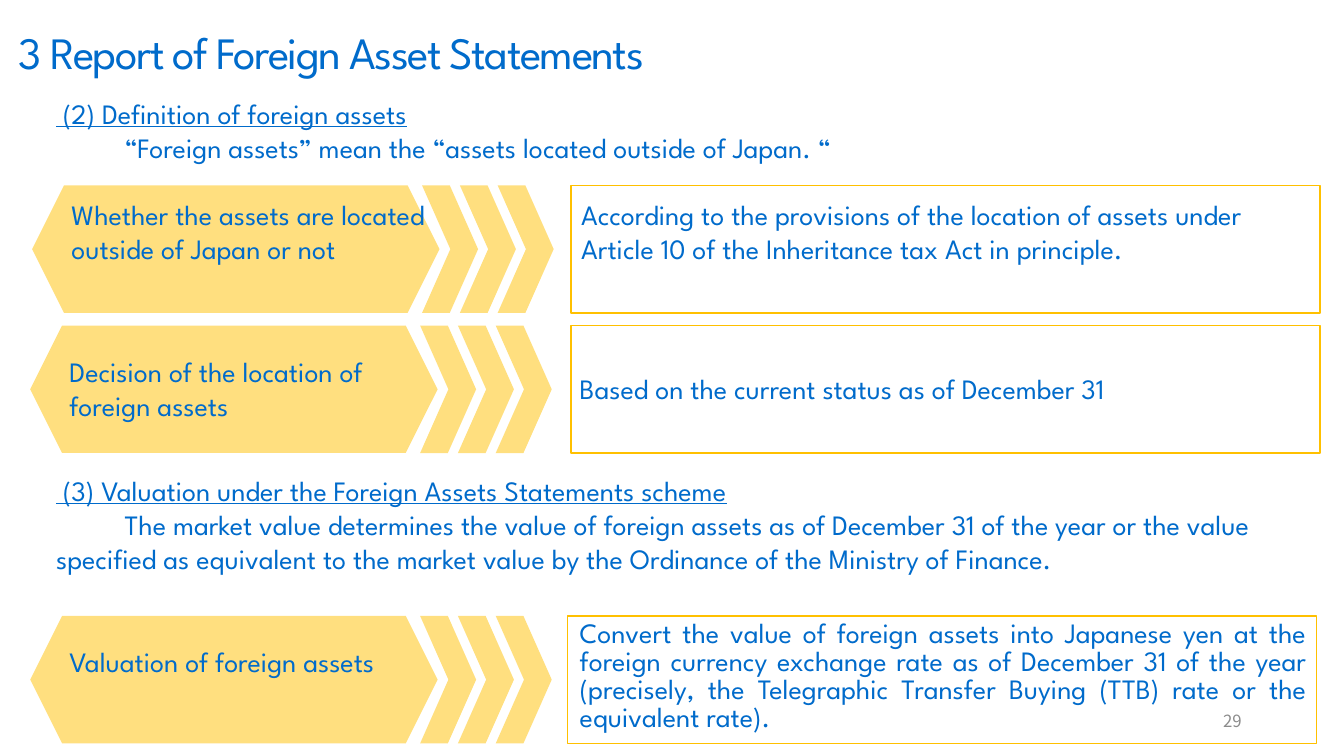
from lxml.etree import SubElement
from pptx import Presentation
from pptx.dml.color import RGBColor
from pptx.enum.shapes import MSO_SHAPE as Preset
from pptx.enum.text import MSO_ANCHOR as Anchor, PP_ALIGN as Align
from pptx.oxml.ns import qn
from pptx.util import Pt

BLUE, GOLD, GREY = "006BCB", "FFC000", "8C8C8C"


def color(value):
    return RGBColor.from_string(value)


class SlideBuilder:
    font = "League Spartan"
    size = 20

    def __init__(self, page):
        self.page = page

    def shape(self, preset, left, top, width, height):
        shape = self.page.shapes.add_shape(
            preset, Pt(left), Pt(top), Pt(width), Pt(height))
        shape.shadow.inherit = False
        return shape

    def tinted(self, preset, left, top, width, height, adjust=None):
        """Add a half-transparent gold shape without an outline."""
        shape = self.shape(preset, left, top, width, height)
        shape.fill.solid()
        shape.fill.fore_color.rgb = color(GOLD)
        tint = shape._element.spPr.find(qn("a:solidFill"))[0]
        SubElement(tint, qn("a:alpha"), val="50000")
        shape.line.fill.background()
        if adjust is not None:
            shape.adjustments[0] = adjust

    def frame(self, left, top, width, height):
        """Add an unfilled box with a gold outline."""
        shape = self.shape(Preset.FLOWCHART_PROCESS, left, top, width, height)
        shape.fill.background()
        shape.line.color.rgb = color(GOLD)
        shape.line.width = Pt(1)

    def text_box(self, left, top, width, height, anchor=Anchor.TOP):
        box = self.page.shapes.add_textbox(
            Pt(left), Pt(top), Pt(width), Pt(height))
        box.text_frame.word_wrap = True
        box.text_frame.vertical_anchor = anchor
        return box.text_frame

    def add_span(self, para, words, size=None, font=None, ink=BLUE,
                 underline=False, tracking=None):
        span = para.add_run()
        span.text = words
        span.font.size = Pt(size or self.size)
        span.font.name = font or self.font
        span.font.color.rgb = color(ink)
        span.font.underline = underline
        if tracking is not None:
            span._r.get_or_add_rPr().set("spc", str(round(tracking * 100)))

    def section(self, top, height, heading, body):
        """Add an underlined heading over a paragraph with a first-line indent."""
        frame = self.text_box(33, top, 917, height)
        self.add_span(frame.paragraphs[0], heading, underline=True)
        para = frame.add_paragraph()
        para._p.get_or_add_pPr().set("indent", str(Pt(49)))
        self.add_span(para, body)

    def row(self, left, top, frame_left, topic, topic_box, answer, answer_box,
            line_spacing=None):
        """Add an arrow band with its topic, and the framed answer beside it."""
        height = 91
        self.tinted(Preset.HEXAGON, left, top, 291, height)
        topic_frame = self.text_box(*topic_box)
        self.add_span(topic_frame.paragraphs[0], topic)
        for step in range(3):
            self.tinted(Preset.CHEVRON, left + 278.5 + 27 * step, top, 40,
                        height, adjust=0.505)
        self.frame(frame_left, top, 535, height)
        para = self.text_box(*answer_box).paragraphs[0]
        if line_spacing:
            para.alignment = Align.JUSTIFY
            para.line_spacing = Pt(line_spacing)
        self.add_span(para, answer)


def main():
    deck = Presentation()
    deck.slide_width, deck.slide_height = Pt(960), Pt(540)
    slide = SlideBuilder(deck.slides.add_slide(deck.slide_layouts[6]))

    title = slide.text_box(6.5, 14.4, 592, 46)
    slide.add_span(title.paragraphs[0], "3 Report of Foreign Asset Statements",
                   size=32, tracking=-1.1)

    slide.section(65.5, 55.5, " (2) Definition of foreign assets",
                  "“Foreign assets” mean the “assets located outside of Japan. “")
    slide.row(23, 132.5, 408,
              "Whether the assets are located outside of Japan or not",
              (44, 137.5, 268.5, 80),
              "According to the provisions of the location of assets under "
              "Article 10 of the Inheritance tax Act in principle.",
              (408, 137.5, 533, 80))
    slide.row(21.6, 232.6, 408,
              "Decision of the location of foreign assets",
              (42.5, 250, 270, 55.5),
              "Based on the current status as of December 31",
              (407, 262, 536, 31.5))

    slide.section(335, 104.5,
                  " (3) Valuation under the Foreign Assets Statements scheme",
                  "The market value determines the value of foreign assets as of "
                  "December 31 of the year or the value specified as equivalent to "
                  "the market value by the Ordinance of the Ministry of Finance.")
    slide.row(21.6, 440, 405.5,
              "Valuation of foreign assets",
              (42.5, 457, 273, 55.5),
              "Convert the value of foreign assets into Japanese yen at the "
              "foreign currency exchange rate as of December 31 of the year "
              "(precisely, the Telegraphic Transfer Buying (TTB) rate or the "
              "equivalent rate).",
              (407, 440, 533.5, 91), line_spacing=20)

    number = slide.text_box(678, 500.5, 216, 29, Anchor.MIDDLE).paragraphs[0]
    number.alignment = Align.RIGHT
    slide.add_span(number, "29", size=12, font="Noto Sans CJK JP", ink=GREY)

    deck.save("out.pptx")


if __name__ == "__main__":
    main()
